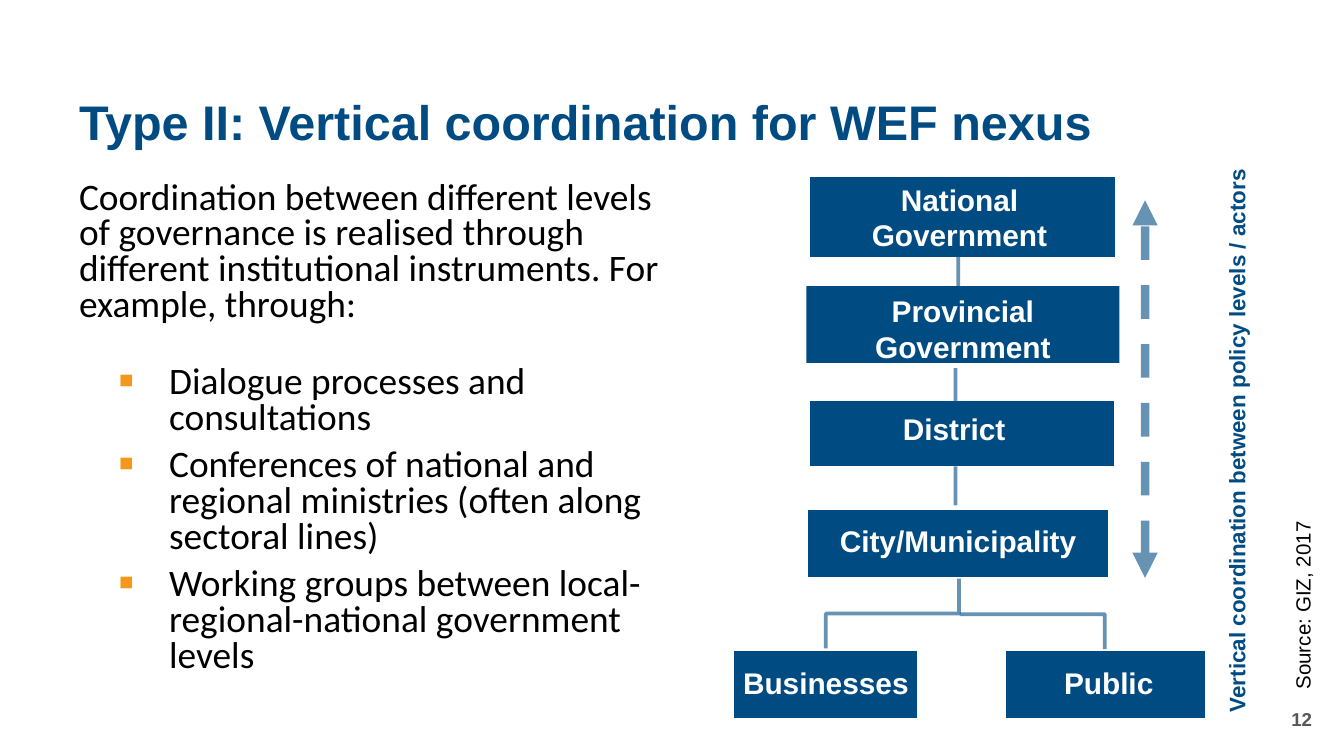
from dataclasses import dataclass
from typing import Optional

import pptx
import pptx.dml.color
import pptx.enum.dml
import pptx.enum.shapes
import pptx.enum.text
import pptx.oxml
import pptx.oxml.ns
import pptx.util
from pptx.util import Inches

RGB = pptx.dml.color.RGBColor
ALIGN = pptx.enum.text.PP_ALIGN
ANCHOR = pptx.enum.text.MSO_ANCHOR
CONNECTOR = pptx.enum.shapes.MSO_CONNECTOR
Frame = tuple[float, float, float, float]


@dataclass(frozen=True)
class Theme:
    blue: str = "004C82"
    orange: str = "F4971A"
    grey: str = "575756"
    black: str = "000000"
    white: str = "FFFFFF"
    heading_font: str = "Arial"
    body_font: str = "Calibri"
    title_size: float = 26
    body_size: float = 20
    box_size: float = 16
    axis_size: float = 12
    source_size: float = 11
    number_size: float = 10
    line_alpha: int = 60


@dataclass(frozen=True)
class Level:
    """A box of the hierarchy; label is None where the text sits in the box."""
    name: str
    box: Frame
    label: Optional[Frame] = None


@dataclass(frozen=True)
class Link:
    start: tuple[float, float]
    end: tuple[float, float]
    width: float = 2
    kind: CONNECTOR = CONNECTOR.STRAIGHT


THEME = Theme()


def font_format(size: float, color: str, bold: bool = True, name: str = THEME.heading_font) -> dict:
    return {"size": pptx.util.Pt(size), "bold": bold, "name": name, "color": color}


BOX_FORMAT = font_format(THEME.box_size, THEME.white)
BODY_FORMAT = font_format(THEME.body_size, THEME.black, False, THEME.body_font)


def write(paragraph, text: str, fmt: dict, **layout) -> None:
    for key, value in layout.items():
        setattr(paragraph, key, value)
    run = paragraph.add_run()
    run.text = text
    for key, value in fmt.items():
        if key == "color":
            run.font.color.rgb = RGB.from_string(value)
        else:
            setattr(run.font, key, value)


def add_text(slide, frame: Frame, text: str, fmt: dict, anchor=ANCHOR.TOP,
             rotation: float = 0, **layout):
    box = slide.shapes.add_textbox(*map(Inches, frame))
    box.rotation = rotation
    box.text_frame.word_wrap = True
    box.text_frame.vertical_anchor = anchor
    write(box.text_frame.paragraphs[0], text, fmt, **layout)
    return box


def add_bullet(paragraph, color: str) -> None:
    props = paragraph._p.get_or_add_pPr()
    props.set("marL", str(Inches(0.67)))
    props.set("indent", str(Inches(-0.38)))
    ns = pptx.oxml.ns.nsdecls("a")
    for xml in (f'<a:buClr {ns}><a:srgbClr val="{color}"/></a:buClr>',
                f'<a:buSzPct {ns} val="125000"/>',
                f'<a:buFont {ns} typeface="Arial"/>',
                f'<a:buChar {ns} char="▪"/>'):
        props.append(pptx.oxml.parse_xml(xml))


def add_level(slide, level: Level) -> None:
    box = slide.shapes.add_shape(pptx.enum.shapes.MSO_SHAPE.RECTANGLE, *map(Inches, level.box))
    box.shadow.inherit = False
    box.fill.solid()
    box.fill.fore_color.rgb = RGB.from_string(THEME.blue)
    if level.label:
        box.line.color.rgb = RGB.from_string(THEME.white)
        box.line.width = pptx.util.Pt(2)
        add_text(slide, level.label, level.name, BOX_FORMAT, alignment=ALIGN.CENTER)
    else:
        box.line.fill.background()
        box.text_frame.word_wrap = True
        box.text_frame.vertical_anchor = ANCHOR.TOP
        write(box.text_frame.paragraphs[0], level.name, BOX_FORMAT, alignment=ALIGN.CENTER)


def add_link(slide, link: Link):
    connector = slide.shapes.add_connector(link.kind, *map(Inches, link.start + link.end))
    connector.line.color.rgb = RGB.from_string(THEME.blue)
    connector.line.width = pptx.util.Pt(link.width)
    properties = connector._element.spPr
    color = properties.find(".//" + pptx.oxml.ns.qn("a:srgbClr"))
    ns = pptx.oxml.ns.nsdecls("a")
    color.append(pptx.oxml.parse_xml(f'<a:alpha {ns} val="{THEME.line_alpha * 1000}"/>'))
    properties.append(pptx.oxml.parse_xml(f"<a:effectLst {ns}/>"))
    return connector


LEVELS = [
    Level("Provincial Government", (6, 2.13, 2.33, 0.57)),
    Level("City/Municipality", (6, 3.78, 2.26, 0.53), (6, 3.84, 2.26, 0.33)),
    Level("Public", (7.47, 4.83, 1.51, 0.53), (7.52, 4.9, 1.46, 0.33)),
    Level("Businesses", (5.45, 4.83, 1.39, 0.53), (5.39, 4.9, 1.51, 0.37)),
    Level("District", (6.01, 2.97, 2.29, 0.51), (5.91, 3.01, 2.38, 0.33)),
    Level("National Government", (6.01, 1.3, 2.3, 0.63), (6.01, 1.3, 2.26, 0.33)),
]
LINKS = [
    Link((7.13, 1.84), (7.13, 2.16)),
    Link((7.11, 2.74), (7.11, 3.02)),
    Link((7.11, 3.47), (7.11, 3.76)),
]
INTRO = ("Coordination between different levels of governance is realised through "
         "different institutional instruments. For example, through:")
INSTRUMENTS = [
    "Dialogue processes and consultations",
    "Conferences of national and regional ministries (often along sectoral lines)",
    "Working groups between local-regional-national government levels",
]


def main() -> None:
    deck = pptx.Presentation()
    deck.slide_width = Inches(10)
    deck.slide_height = deck.slide_width * 9 // 16
    slide = deck.slides.add_slide(deck.slide_layouts[6])

    # Title, body and slide number
    add_text(slide, (0.49, 0.63, 9.37, 0.59), "Type II: Vertical coordination for WEF nexus",
             font_format(THEME.title_size, THEME.blue), ANCHOR.MIDDLE, line_spacing=0.9)
    body = add_text(slide, (0.49, 1.3, 4.64, 4.05), INTRO, BODY_FORMAT, line_spacing=0.8)
    for index, instrument in enumerate(INSTRUMENTS):
        paragraph = body.text_frame.add_paragraph()
        add_bullet(paragraph, THEME.orange)
        write(paragraph, instrument, BODY_FORMAT, level=1, line_spacing=0.8,
              space_before=pptx.util.Pt(6 if index else 22))
    add_text(slide, (7.61, 5.2, 2.25, 0.3), "12", font_format(THEME.number_size, THEME.grey),
             ANCHOR.MIDDLE, alignment=ALIGN.RIGHT)

    # Government levels and the links between them
    for level in LEVELS:
        add_level(slide, level)
    for link in LINKS:
        add_link(slide, link)

    # Branches from the city to businesses and the public
    to_businesses = add_link(slide, Link((6.38, 4.07), (6.9, 5.06), kind=CONNECTOR.ELBOW))
    to_businesses._element.spPr.xfrm.set("rot", str(90 * 60000))
    to_public = add_link(slide, Link((7.14, 4.57), (8.22, 4.83), kind=CONNECTOR.ELBOW))
    to_public._element.spPr.find(pptx.oxml.ns.qn("a:prstGeom")).set("prst", "bentConnector2")

    # Two-way coordination arrow
    coordination = add_link(slide, Link((8.52, 4.3), (8.52, 1.49), width=4.5))
    coordination.line.dash_style = pptx.enum.dml.MSO_LINE.DASH
    for end in ("headEnd", "tailEnd"):
        coordination.line._get_or_add_ln().append(pptx.oxml.parse_xml(
            f'<a:{end} {pptx.oxml.ns.nsdecls("a")} type="triangle"/>'))

    # Upright captions
    add_text(slide, (6.98, 3.13, 4.44, 0.3), "Vertical coordination between policy levels / actors",
             font_format(THEME.axis_size, THEME.blue), rotation=270, alignment=ALIGN.CENTER)
    add_text(slide, (8.75, 4.14, 1.89, 0.29), "Source: GIZ, 2017",
             font_format(THEME.source_size, THEME.black, False), rotation=270)

    deck.save("out.pptx")


if __name__ == "__main__":
    main()
